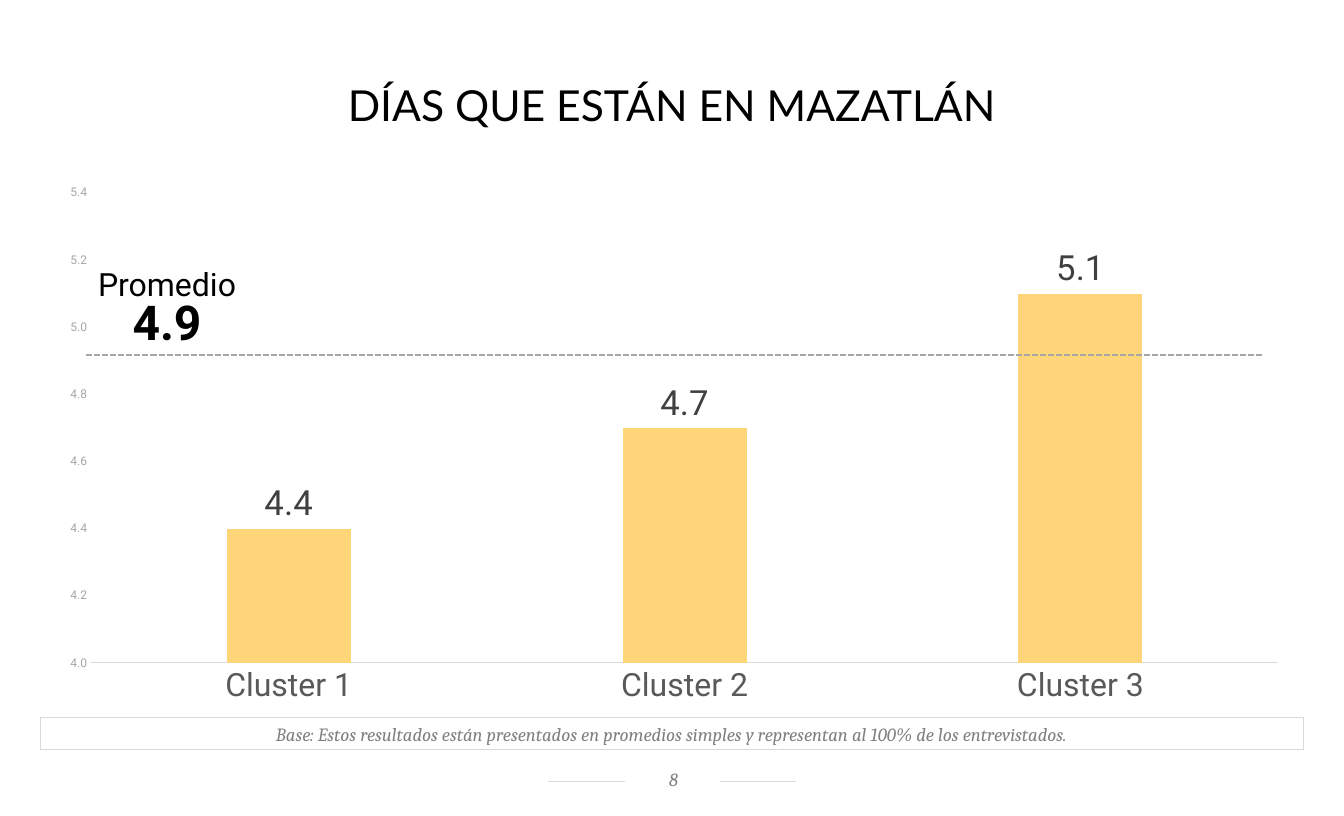
import pptx
import pptx.chart.data
import pptx.dml.color
import pptx.enum.chart
import pptx.enum.dml
import pptx.enum.shapes
import pptx.enum.text
import pptx.oxml
import pptx.oxml.ns
import pptx.util

Inches = pptx.util.Inches
Pt = pptx.util.Pt
CENTER = pptx.enum.text.PP_ALIGN.CENTER
ANCHOR = pptx.enum.text.MSO_ANCHOR
GROW = pptx.enum.text.MSO_AUTO_SIZE.SHAPE_TO_FIT_TEXT

COLORS = {
    "white": "FFFFFF", "black": "000000", "bar": "FFD579", "rule": "D9D9D9",
    "average": "A6A6A6", "note": "808080", "category": "595959", "label": "404040",
}
NOTE = {"name": "Cambria", "size": Pt(14), "italic": True, "color": "note"}


def rgb(name):
    return pptx.dml.color.RGBColor.from_string(COLORS[name])


def format_font(font, values):
    for key, value in values.items():
        if key == "color":
            font.color.rgb = rgb(value)
        else:
            setattr(font, key, value)


def format_line(line, color, width):
    line.color.rgb = rgb(color)
    line.width = Pt(width)


def write_text(sp, lines, frame=None, spacing=None):
    tf = sp.text_frame
    settings = {"word_wrap": True, **(frame or {})}
    for key, value in settings.items():
        setattr(tf, key, value)
    for i, (text, font) in enumerate(lines):
        p = tf.paragraphs[0] if i == 0 else tf.add_paragraph()
        p.alignment = CENTER
        if spacing:
            p.line_spacing = spacing
        r = p.add_run()
        r.text = text
        format_font(r.font, font)


def add_title(s, text):
    sp = s.shapes.title
    box = {"left": 0, "top": 0.85, "width": 14, "height": 0.57}
    for key, value in box.items():
        setattr(sp, key, Inches(value))
    frame = {"margin_left": Inches(0.14), "margin_right": Inches(0.14),
             "margin_top": Inches(0.07), "margin_bottom": Inches(0.07),
             "vertical_anchor": ANCHOR.TOP, "auto_size": GROW}
    font = {"name": "Lato", "size": Pt(32), "color": "black"}
    write_text(sp, [(text, font)], frame, 0.8)


def add_rule(s, x1, x2, y, color, width, dash=None):
    sp = s.shapes.add_connector(pptx.enum.shapes.MSO_CONNECTOR.STRAIGHT,
                                Inches(x1), Inches(y), Inches(x2), Inches(y))
    format_line(sp.line, color, width)
    if dash:
        sp.line.dash_style = dash
    sp._element.spPr.append(pptx.oxml.parse_xml(
        f'<a:effectLst {pptx.oxml.ns.nsdecls("a")}/>'))


def add_box(s, box, text, frame, border=None):
    sp = s.shapes.add_shape(pptx.enum.shapes.MSO_SHAPE.RECTANGLE,
                            *map(Inches, box))
    sp.shadow.inherit = False
    sp.fill.solid()
    sp.fill.fore_color.rgb = rgb("white")
    if border:
        format_line(sp.line, border, 0.75)
    else:
        sp.line.fill.background()
    write_text(sp, [(text, NOTE)], frame)


def set_plot_layout(chart, x, y, w, h):
    plot_area = chart._chartSpace.chart.plotArea
    for old in plot_area.findall(pptx.oxml.ns.qn("c:layout")):
        plot_area.remove(old)
    sizes = "".join(f'<c:{key} val="{value}"/>'
                    for key, value in zip("xywh", (x, y, w, h)))
    plot_area.insert(0, pptx.oxml.parse_xml(
        f'<c:layout {pptx.oxml.ns.nsdecls("c")}><c:manualLayout>'
        '<c:layoutTarget val="inner"/><c:xMode val="edge"/><c:yMode val="edge"/>'
        f'{sizes}</c:manualLayout></c:layout>'))


def add_days_chart(s):
    data = pptx.chart.data.CategoryChartData(number_format="0.0")
    data.categories = ["Cluster 1", "Cluster 2", "Cluster 3"]
    data.add_series("Series 1", [4.4, 4.7, 5.1])
    chart = s.shapes.add_chart(
        pptx.enum.chart.XL_CHART_TYPE.COLUMN_CLUSTERED,
        Inches(0.42), Inches(1.84), Inches(13.16), Inches(5.63), data).chart
    chart.has_legend = chart.has_title = False
    format_font(chart.font, {"name": "Calibri", "size": Pt(10), "color": "black"})
    set_plot_layout(chart, 0.04, 0.03, 0.94, 0.87)

    # Axes
    no_tick = pptx.enum.chart.XL_TICK_MARK.NONE
    for axis, size, color in ((chart.category_axis, 24, "category"),
                              (chart.value_axis, 9, "average")):
        axis.major_tick_mark = axis.minor_tick_mark = no_tick
        axis.has_major_gridlines = False
        format_font(axis.tick_labels.font,
                    {"name": "Roboto", "size": Pt(size), "color": color})
    format_line(chart.category_axis.format.line, "rule", 0.75)
    axis = chart.value_axis
    scale = {"minimum_scale": 4.0, "maximum_scale": 5.4, "major_unit": 0.2}
    for key, value in scale.items():
        setattr(axis, key, value)
    axis.format.line.fill.background()
    axis.tick_labels.number_format = "0.0"
    axis.tick_labels.number_format_is_linked = False

    # Columns and their labels
    plot = chart.plots[0]
    plot.vary_by_categories = False
    plot.gap_width, plot.overlap = 219, -27
    fill = plot.series[0].format.fill
    fill.solid()
    fill.fore_color.rgb = rgb("bar")
    labels = plot.series[0].data_labels
    settings = {"show_value": True, "number_format": "0.0",
                "number_format_is_linked": False,
                "position": pptx.enum.chart.XL_LABEL_POSITION.OUTSIDE_END}
    for key, value in settings.items():
        setattr(labels, key, value)
    format_font(labels.font, {"name": "Roboto", "size": Pt(26), "color": "label"})


def add_average(s):
    add_rule(s, 0.9, 13.16, 3.7, "average", 1.5,
             pptx.enum.dml.MSO_LINE.SQUARE_DOT)
    sp = s.shapes.add_textbox(Inches(0.9), Inches(2.78), Inches(1.68), Inches(0.92))
    font = {"name": "Roboto", "size": Pt(24), "color": "black"}
    write_text(sp, [("Promedio", font),
                    ("4.9", {**font, "size": Pt(36), "bold": True})],
               {"auto_size": GROW}, 0.81)


def main():
    prs = pptx.Presentation()
    prs.slide_width, prs.slide_height = Inches(14), Inches(8.5)
    s = prs.slides.add_slide(prs.slide_layouts[5])

    add_title(s, "DÍAS QUE ESTÁN EN MAZATLÁN")
    add_days_chart(s)

    # Page number over its rule
    add_rule(s, 5.71, 8.29, 8.14, "rule", 0.5)
    add_box(s, (6.51, 7.98, 0.99, 0.29), "8",
            {"vertical_anchor": ANCHOR.MIDDLE, "margin_left": Inches(0.12),
             "margin_top": Inches(0.02)})

    # Base note
    add_box(s, (0.42, 7.47, 13.16, 0.34),
            "Base: Estos resultados están presentados en promedios simples "
            "y representan al 100% de los entrevistados.",
            {"vertical_anchor": ANCHOR.BOTTOM, "auto_size": GROW}, "rule")

    add_average(s)
    prs.save("out.pptx")


if __name__ == "__main__":
    main()
